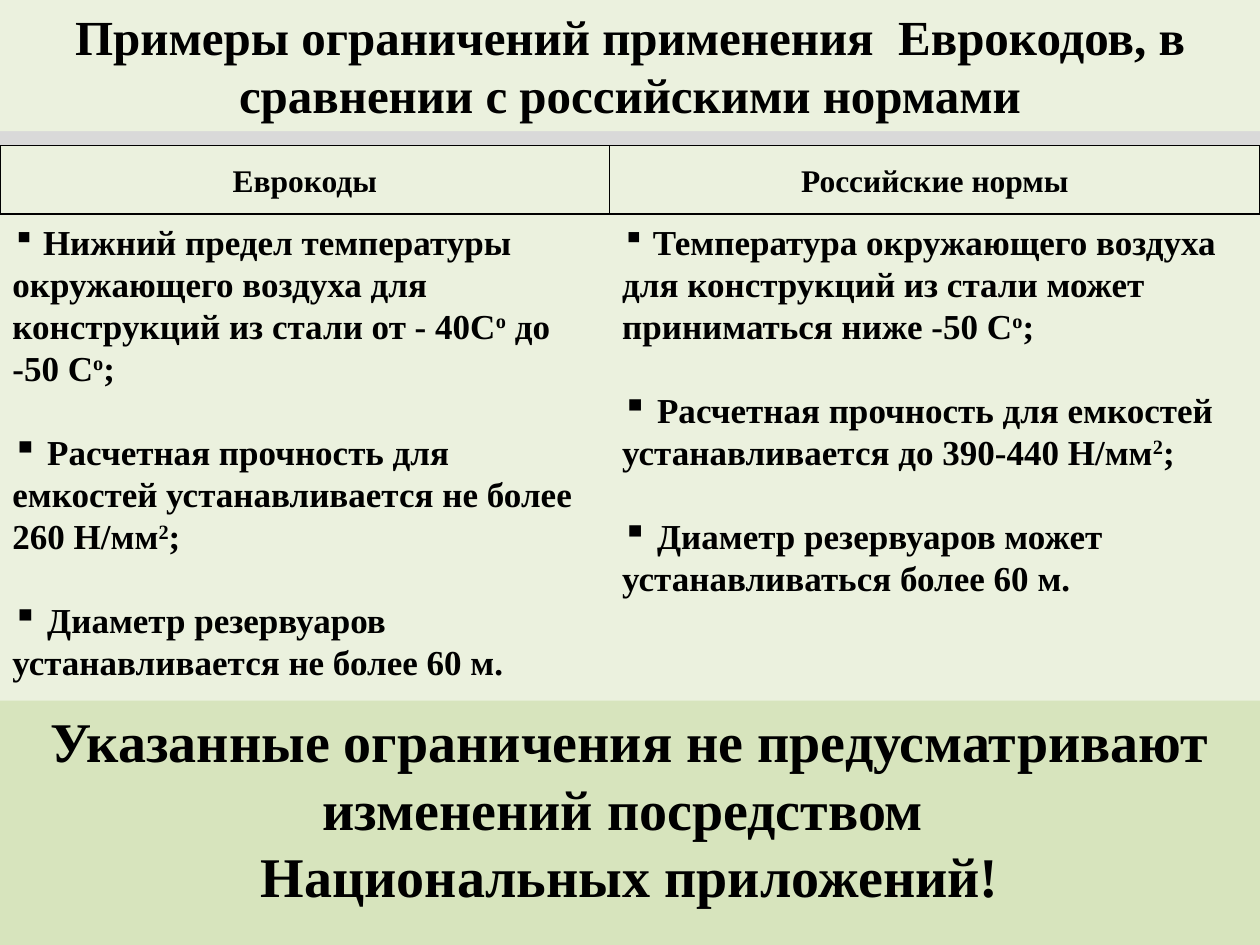
import dataclasses
import typing

import lxml.etree
import pptx
import pptx.dml.color
import pptx.enum.shapes
import pptx.enum.text
import pptx.oxml.ns
import pptx.util

Pt = pptx.util.Pt
Align = pptx.enum.text.PP_ALIGN
Anchor = pptx.enum.text.MSO_ANCHOR

PAGE_WIDTH, PAGE_HEIGHT = 720, 540
SPLIT = 348.5
HEADER_TOP, BODY_TOP, FOOTER_TOP = 83, 122.4, 400.4
BLACK, PALE, GREEN, GREY = "000000", "EBF1DE", "D7E4BD", "D9D9D9"
SERIF = "Times New Roman"


@dataclasses.dataclass
class Span:
    text: str
    size: float = 20
    font: str = SERIF
    bold: bool = True
    raised: bool = False


@dataclasses.dataclass
class Column:
    left: float
    width: float
    heading: str
    points: list[list[Span]]


def color(value: str) -> pptx.dml.color.RGBColor:
    return pptx.dml.color.RGBColor.from_string(value)


def add_box(page, left: float, top: float, width: float, height: float,
            fill: str, line: typing.Optional[str] = None, anchor=Anchor.TOP):
    box = page.shapes.add_shape(pptx.enum.shapes.MSO_SHAPE.RECTANGLE,
                                Pt(left), Pt(top), Pt(width), Pt(height))
    box.shadow.inherit = False
    box.fill.solid()
    box.fill.fore_color.rgb = color(fill)
    if line:
        box.line.color.rgb = color(line)
        box.line.width = Pt(0.75)
    else:
        box.line.fill.background()
    box.text_frame.word_wrap = True
    box.text_frame.vertical_anchor = anchor
    return box


def add_span(para, span: Span) -> None:
    run = para.add_run()
    run.text = span.text
    run.font.size = Pt(span.size)
    run.font.name = span.font
    run.font.bold = span.bold
    run.font.color.rgb = color(BLACK)
    if span.raised:
        run.font._element.set("baseline", "30000")


def write_centered(box, lines: list[str], size: float) -> None:
    para = box.text_frame.paragraphs[0]
    para.alignment = Align.CENTER
    for number, line in enumerate(lines):
        if number:
            para.add_line_break()
        add_span(para, Span(line, size))


def write_points(box, points: list[list[Span]]) -> None:
    for number, spans in enumerate(points):
        frame = box.text_frame
        para = frame.add_paragraph() if number else frame.paragraphs[0]
        para.alignment = Align.LEFT
        para.space_before = Pt(24 if number else 0)
        properties = para._p.get_or_add_pPr()
        bullet = lxml.etree.SubElement(properties, pptx.oxml.ns.qn("a:buChar"))
        bullet.set("char", "▪")
        for span in spans:
            add_span(para, span)


def add_column_body(page, column: Column) -> None:
    box = add_box(page, column.left, BODY_TOP, column.width,
                  FOOTER_TOP - BODY_TOP, PALE)
    write_points(box, column.points)


def add_column_heading(page, column: Column) -> None:
    box = add_box(page, column.left, HEADER_TOP, column.width,
                  BODY_TOP - HEADER_TOP, PALE, BLACK, Anchor.MIDDLE)
    write_centered(box, [column.heading], 18)


LEAD = Span(" ", 18, "Calibri", False)
DEGREE = Span("о", raised=True)
SQUARE = Span("2", raised=True)
END = Span(";")

COLUMNS = [
    Column(0, SPLIT, "Еврокоды", [
        [LEAD,
         Span("Нижний предел температуры окружающего воздуха для "
              "конструкций из стали от - 40С"),
         DEGREE, Span(" до -50 С"), DEGREE, END],
        [Span(" Расчетная прочность для емкостей устанавливается "
              "не более 260 Н/мм"), SQUARE, END],
        [Span(" Диаметр резервуаров устанавливается не более 60 м.")],
    ]),
    Column(SPLIT, PAGE_WIDTH - SPLIT, "Российские нормы", [
        [LEAD,
         Span("Температура окружающего воздуха для конструкций из стали "
              "может приниматься ниже -50 С"), DEGREE, END],
        [Span(" Расчетная прочность для емкостей устанавливается "
              "до 390-440 Н/мм"), SQUARE, END],
        [Span(" Диаметр резервуаров может устанавливаться более 60 м.")],
    ]),
]


def main() -> None:
    deck = pptx.Presentation()
    deck.slide_width, deck.slide_height = Pt(PAGE_WIDTH), Pt(PAGE_HEIGHT)
    page = deck.slides.add_slide(deck.slide_layouts[6])
    page.background.fill.solid()
    page.background.fill.fore_color.rgb = color(PALE)

    add_box(page, 0, 0, PAGE_WIDTH, 106, GREY)
    for column in COLUMNS:
        add_column_body(page, column)

    title = add_box(page, 0, 0, PAGE_WIDTH, 75, PALE)
    title.text_frame.auto_size = pptx.enum.text.MSO_AUTO_SIZE.SHAPE_TO_FIT_TEXT
    write_centered(title, ["Примеры ограничений применения  Еврокодов, "
                           "в сравнении с российскими нормами"], 28)

    for column in COLUMNS:
        add_column_heading(page, column)

    footer = add_box(page, 0, FOOTER_TOP, PAGE_WIDTH,
                     PAGE_HEIGHT - FOOTER_TOP, GREEN)
    write_centered(footer, ["Указанные ограничения не предусматривают "
                            "изменений посредством ",
                            "Национальных приложений!"], 32)
    deck.save("out.pptx")


if __name__ == "__main__":
    main()
